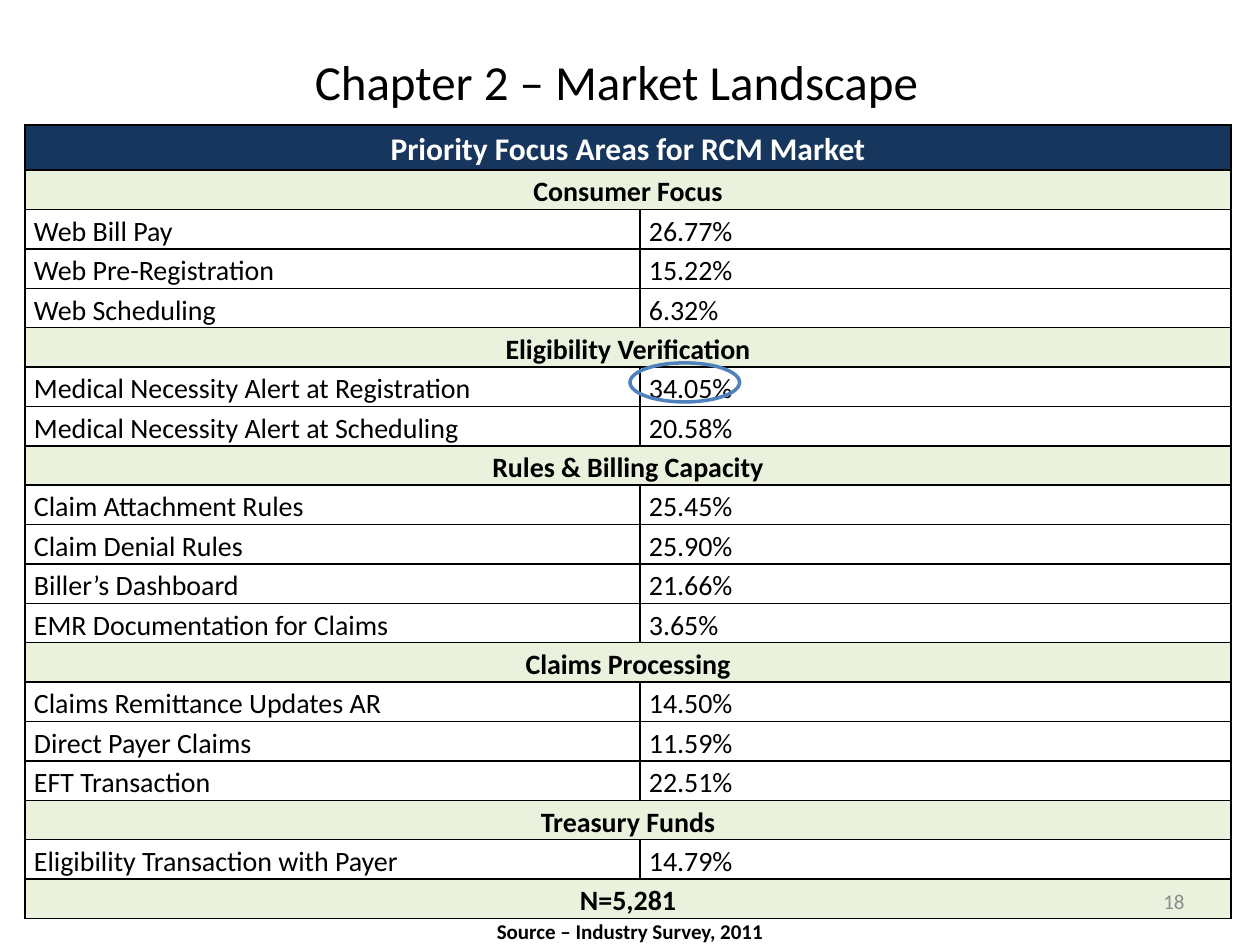
from dataclasses import dataclass
from itertools import chain

from lxml import etree
from pptx import Presentation
from pptx.dml.color import RGBColor
from pptx.enum.shapes import MSO_SHAPE
from pptx.enum.text import MSO_ANCHOR, PP_ALIGN
from pptx.oxml.ns import qn
from pptx.util import Inches, Pt

SLIDE_WIDTH, SLIDE_HEIGHT = Inches(10), Inches(7.5)
BLACK, WHITE, NAVY, PALE_GREEN = "000000", "FFFFFF", "17365D", "EAF1DD"
BLUE, GREY = "4F81BD", "8C8C8C"


@dataclass(frozen=True)
class Area:
    """A rectangle in percent of the slide's width and height."""
    left: float
    top: float
    width: float
    height: float

    def emu(self) -> tuple[int, int, int, int]:
        return (round(SLIDE_WIDTH * self.left / 100), round(SLIDE_HEIGHT * self.top / 100),
                round(SLIDE_WIDTH * self.width / 100), round(SLIDE_HEIGHT * self.height / 100))


@dataclass(frozen=True)
class Style:
    size: float
    color: str = BLACK
    bold: bool = False
    align: PP_ALIGN = PP_ALIGN.LEFT


@dataclass(frozen=True)
class Row:
    texts: tuple[str, ...]
    style: Style
    fill: str | None = None
    height: float = 0.31


@dataclass(frozen=True)
class Label:
    text: str
    area: Area
    style: Style
    anchor: MSO_ANCHOR = MSO_ANCHOR.MIDDLE


HEADER = Style(18, WHITE, True, PP_ALIGN.CENTER)
SECTION = Style(16, bold=True, align=PP_ALIGN.CENTER)
ENTRY = Style(16)

FOCUS_AREAS = {
    "Consumer Focus": {
        "Web Bill Pay": "26.77%",
        "Web Pre-Registration": "15.22%",
        "Web Scheduling": "6.32%",
    },
    "Eligibility Verification": {
        "Medical Necessity Alert at Registration": "34.05%",
        "Medical Necessity Alert at Scheduling": "20.58%",
    },
    "Rules & Billing Capacity": {
        "Claim Attachment Rules": "25.45%",
        "Claim Denial Rules": "25.90%",
        "Biller’s Dashboard": "21.66%",
        "EMR Documentation for Claims": "3.65%",
    },
    "Claims Processing": {
        "Claims Remittance Updates AR": "14.50%",
        "Direct Payer Claims": "11.59%",
        "EFT Transaction": "22.51%",
    },
    "Treasury Funds": {"Eligibility Transaction with Payer": "14.79%"},
    "N=5,281": {},
}
COLUMN_SHARES = (0.51, 0.49)
TABLE_AREA = Area(2, 13.2, 95.7, 82.6)
HIGHLIGHT_AREA = Area(50, 38.4, 8.7, 4.13)
LABELS = (
    Label("Chapter 2 – Market Landscape", Area(24, 4.8, 50.5, 7.6), Style(28), MSO_ANCHOR.TOP),
    Label("Source – Industry Survey, 2011", Area(0, 95.2, 100, 6.67),
          Style(12, bold=True, align=PP_ALIGN.CENTER)),
    Label("18", Area(71.7, 92.67, 23.3, 5.33), Style(12, GREY, align=PP_ALIGN.RIGHT)),
)


def rgb(value: str) -> RGBColor:
    return RGBColor.from_string(value)


def write(frame, text: str, style: Style, line_spacing: float = 1.0) -> None:
    paragraph = frame.paragraphs[0]
    paragraph.alignment, paragraph.line_spacing = style.align, line_spacing
    run = paragraph.add_run()
    run.text = text
    font_format = {"name": "Calibri", "size": Pt(style.size), "bold": style.bold}
    for attribute, value in font_format.items():
        setattr(run.font, attribute, value)
    run.font.color.rgb = rgb(style.color)


def border_cell(cell) -> None:
    """Put a black one-point line on each side, ahead of the cell's fill."""
    properties = cell._tc.get_or_add_tcPr()
    for position, side in enumerate(("lnL", "lnR", "lnT", "lnB")):
        line = etree.Element(qn(f"a:{side}"), w=str(Pt(1)))
        fill = etree.SubElement(line, qn("a:solidFill"))
        etree.SubElement(fill, qn("a:srgbClr"), val=BLACK)
        properties.insert(position, line)


def focus_rows() -> list[Row]:
    sections = (
        [Row((name,), SECTION, PALE_GREEN), *(Row(entry, ENTRY) for entry in entries.items())]
        for name, entries in FOCUS_AREAS.items()
    )
    title = Row(("Priority Focus Areas for RCM Market",), HEADER, NAVY, 0.36)
    return [title, *chain.from_iterable(sections)]


def draw_table(slide, rows: list[Row]) -> None:
    frame = slide.shapes.add_table(len(rows), len(COLUMN_SHARES), *TABLE_AREA.emu())
    table, table_width = frame.table, frame.width
    for column, share in zip(table.columns, COLUMN_SHARES):
        column.width = round(table_width * share)
    cell_format = {"margin_left": Inches(0.07), "margin_right": Inches(0.07),
                   "margin_top": 0, "margin_bottom": 0}
    for index, row in enumerate(rows):
        table.rows[index].height = Inches(row.height)
        cells = list(table.rows[index].cells)
        if len(row.texts) == 1:
            cells[0].merge(cells[-1])
        for cell in cells:
            for attribute, value in cell_format.items():
                setattr(cell, attribute, value)
            if row.fill:
                cell.fill.solid()
                cell.fill.fore_color.rgb = rgb(row.fill)
            else:
                cell.fill.background()
            border_cell(cell)
        for cell, text in zip(cells, row.texts):
            write(cell.text_frame, text, row.style, 1.15)


def draw_label(slide, label: Label) -> None:
    frame = slide.shapes.add_textbox(*label.area.emu()).text_frame
    frame.word_wrap, frame.vertical_anchor = True, label.anchor
    write(frame, label.text, label.style)


def draw_highlight(slide) -> None:
    ring = slide.shapes.add_shape(MSO_SHAPE.OVAL, *HIGHLIGHT_AREA.emu())
    ring.shadow.inherit = False
    ring.fill.background()
    ring.line.color.rgb = rgb(BLUE)
    ring.line.width = Pt(2)


def main() -> None:
    presentation = Presentation()
    presentation.slide_width, presentation.slide_height = SLIDE_WIDTH, SLIDE_HEIGHT
    slide = presentation.slides.add_slide(presentation.slide_layouts[6])
    draw_table(slide, focus_rows())
    for label in LABELS:
        draw_label(slide, label)
    draw_highlight(slide)
    presentation.save("out.pptx")


if __name__ == "__main__":
    main()
